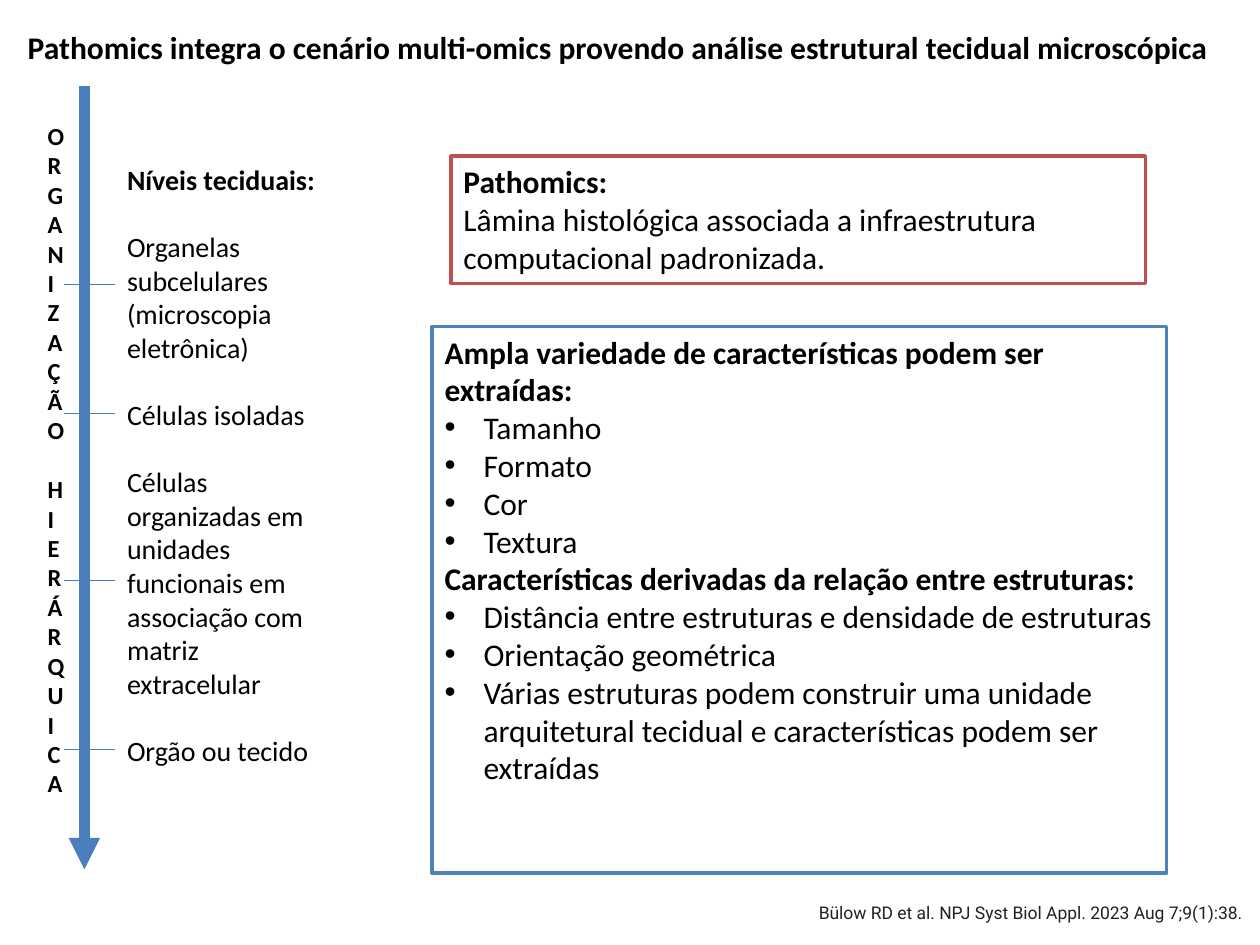
"""Build the slide on pathomics and the hierarchy of tissue organisation."""
from pptx import Presentation
from pptx.dml.color import RGBColor
from pptx.enum.shapes import MSO_CONNECTOR as CONN, MSO_SHAPE as SHAPE
from pptx.enum.text import MSO_ANCHOR, MSO_AUTO_SIZE, PP_ALIGN
from pptx.oxml.ns import qn
from pptx.util import Inches, Pt
from lxml.etree import SubElement


def rgb(value):
    return RGBColor.from_string(value)


def write(sp, paras, size, gap=0, font="Calibri", color="000000"):
    tf = sp.text_frame
    frame = {"word_wrap": True, "auto_size": MSO_AUTO_SIZE.NONE,
             "vertical_anchor": MSO_ANCHOR.TOP,
             "margin_left": Inches(0.1), "margin_right": Inches(0.1),
             "margin_top": Inches(0.05), "margin_bottom": Inches(0.05)}
    for name, value in frame.items():
        setattr(tf, name, value)
    for i, (style, text) in enumerate(paras):
        p = tf.add_paragraph() if i else tf.paragraphs[0]
        p.alignment = PP_ALIGN.LEFT
        p.space_before = Pt(gap if i else 0)
        if style == "bullet":
            pPr = p._p.get_or_add_pPr()
            pPr.set("marL", str(Inches(0.31)))
            pPr.set("indent", str(-Inches(0.31)))
            SubElement(pPr, qn("a:buFont"), typeface="Arial")
            SubElement(pPr, qn("a:buChar"), char="•")
        r = p.add_run()
        r.text = text
        for name, value in {"name": font, "size": Pt(size), "bold": style == "bold"}.items():
            setattr(r.font, name, value)
        r.font.color.rgb = rgb(color)


prs = Presentation()
prs.slide_width, prs.slide_height = Inches(10), Inches(7.5)
s = prs.slides.add_slide(prs.slide_layouts[5])

title = s.shapes.title
for name, value in {"left": 0.12, "top": 0.17, "width": 9.72, "height": 0.4}.items():
    setattr(title, name, Inches(value))
write(title, [("bold", "Pathomics integra o cenário multi-omics provendo "
                       "análise estrutural tecidual microscópica")], 18)

features = [
    ("bold", "Ampla variedade de características podem ser extraídas:"),
    ("bullet", "Tamanho"),
    ("bullet", "Formato"),
    ("bullet", "Cor"),
    ("bullet", "Textura"),
    ("bold", "Características derivadas da relação entre estruturas:"),
    ("bullet", "Distância entre estruturas e densidade de estruturas"),
    ("bullet", "Orientação geométrica"),
    ("bullet", "Várias estruturas podem construir uma unidade arquitetural "
               "tecidual e características podem ser extraídas"),
]
definition = [
    ("bold", "Pathomics:"),
    ("plain", "Lâmina histológica associada a infraestrutura computacional padronizada."),
]
panels = [((3.43, 2.59, 5.83, 4.34), "4F81BD", features),
          ((3.58, 1.24, 5.51, 1.01), "C0504D", definition)]
for box, color, paras in panels:
    sp = s.shapes.add_shape(SHAPE.RECTANGLE, *map(Inches, box))
    sp.shadow.inherit = False
    sp.fill.solid()
    sp.fill.fore_color.rgb = rgb("FFFFFF")
    sp.line.color.rgb = rgb(color)
    sp.line.width = Pt(2)
    write(sp, paras, 18)

levels = [
    ("bold", "Níveis teciduais:"),
    ("plain", "Organelas subcelulares (microscopia eletrônica)"),
    ("plain", "Células isoladas"),
    ("plain", "Células organizadas em unidades funcionais em associação "
              "com matriz extracelular"),
    ("plain", "Orgão ou tecido"),
]
axis_label = [("bold", "ORGANIZAÇÃO"), ("bold", "HIERÁRQUICA")]
citation = [("plain", "Bülow RD et al. NPJ Syst Biol Appl. 2023 Aug 7;9(1):38.")]
texts = [((0.91, 1.24, 1.71, 4.95), levels, 16, 19.2, "Calibri", "000000"),
         ((0.28, 0.91, 0.31, 5.52), axis_label, 14, 17, "Calibri", "000000"),
         ((6.4, 7.11, 3.6, 0.27), citation, 10, 0, "Roboto", "212121")]
for box, paras, size, gap, font, color in texts:
    write(s.shapes.add_textbox(*map(Inches, box)), paras, size, gap, font, color)

axis = (0.67, 0.68, 0.67, 6.9)
ticks = [(0.51, y, 0.91, y) for y in (2.26, 3.28, 4.61, 5.95)]
for ends in [axis, *ticks]:
    c = s.shapes.add_connector(CONN.STRAIGHT, *map(Inches, ends))
    c.line.color.rgb = rgb("4B7EBC")
    c.line.width = Pt(6 if ends == axis else 0.75)
    if ends == axis:
        SubElement(c.line._get_or_add_ln(), qn("a:tailEnd"), type="triangle")
    SubElement(c._element.spPr, qn("a:effectLst"))

prs.save("out.pptx")
